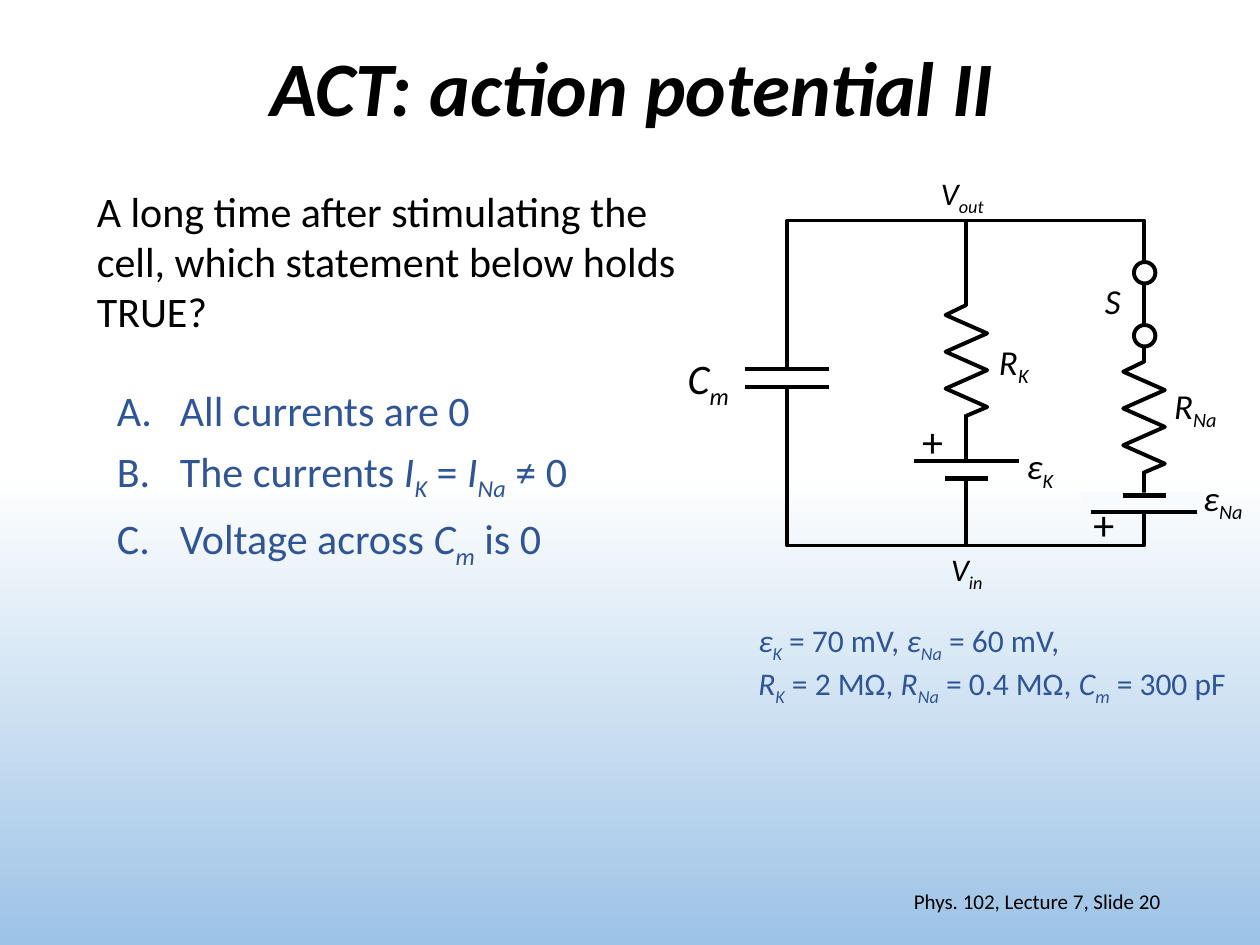
import pptx
import pptx.util
import pptx.dml.color
import pptx.enum.shapes
import pptx.enum.text
from lxml import etree
from pptx.util import Inches

COLORS = {"black": "000000", "white": "FFFFFF", "sky": "9DC3E6",
          "answer": "2F5597", "tint": "F8FBFD"}
FONT = "Calibri"
DRAWING = "{http://schemas.openxmlformats.org/drawingml/2006/main}"

TITLE = "ACT: action potential II"
QUESTION = ("A long time after stimulating the cell, "
            "which statement below holds TRUE?")
FOOTER = "Phys. 102, Lecture 7, Slide 20"
ANSWERS = [
    [("All currents are 0", "plain")],
    [("The currents ", "plain"), ("I", "italic"), ("K", "sub"), (" = ", "plain"),
     ("I", "italic"), ("Na", "sub"), (" ≠ 0", "plain")],
    [("Voltage across ", "plain"), ("C", "italic"), ("m", "sub"), (" is 0", "plain")],
]
VALUES = [
    [("ε", "italic"), ("K", "sub"), (" = 70 mV, ", "plain"),
     ("ε", "italic"), ("Na", "sub"), (" = 60 mV,", "plain")],
    [("R", "italic"), ("K", "sub"), (" = 2 MΩ, ", "plain"),
     ("R", "italic"), ("Na", "sub"), (" = 0.4 MΩ, ", "plain"),
     ("C", "italic"), ("m", "sub"), (" = 300 pF", "plain")],
]
SYMBOLS = [
    ("R", "Na", 20, (9.22, 3, 0.57, 0.44)),
    ("ε", "K", 20, (8.05, 3.48, 0.43, 0.44)),
    ("R", "K", 20, (7.83, 2.65, 0.45, 0.44)),
    ("ε", "Na", 20, (9.45, 3.73, 0.55, 0.44)),
    ("V", "out", 18, (7.37, 1.33, 0.63, 0.4)),
    ("C", "m", 24, (5.36, 2.75, 0.55, 0.5)),
    ("S", "", 20, (8.67, 2.17, 0.33, 0.44)),
    ("V", "in", 18, (7.45, 4.32, 0.47, 0.4)),
]
PLUS_SIGNS = [(7.22, 3.25, 0.37, 0.5), (8.58, 3.91, 0.37, 0.5)]

LEFT, MIDDLE, RIGHT = 6.25, 7.67, 9.08
TOP, BOTTOM = 1.75, 4.33

presentation = pptx.Presentation()
presentation.slide_width, presentation.slide_height = Inches(10), Inches(7.5)
slide = presentation.slides.add_slide(presentation.slide_layouts[6])
shapes = slide.shapes


def rgb(name):
    return pptx.dml.color.RGBColor.from_string(COLORS[name])


def add_text(box, paragraphs, size, color="black", bold=False, wrap=True,
             align=None, anchor=None, spacing=None, after=None, lettered=False):
    frame = shapes.add_textbox(*map(Inches, box)).text_frame
    frame.word_wrap = wrap
    if anchor:
        frame.vertical_anchor = anchor
    for index, runs in enumerate(paragraphs):
        paragraph = frame.paragraphs[0] if index == 0 else frame.add_paragraph()
        if lettered:
            properties = paragraph._p.get_or_add_pPr()
            properties.set("marL", str(Inches(0.5)))
            properties.set("indent", str(Inches(-0.5)))
            etree.SubElement(properties, DRAWING + "buFont", typeface="+mj-lt")
            etree.SubElement(properties, DRAWING + "buAutoNum", type="alphaUcPeriod")
        paragraph.alignment = align
        paragraph.line_spacing = spacing
        if after:
            paragraph.space_after = pptx.util.Pt(after)
        for text, style in runs:
            run = paragraph.add_run()
            run.text = text
            run.font.name = FONT
            run.font.size = pptx.util.Pt(size)
            run.font.bold = bold
            run.font.italic = style != "plain"
            run.font.color.rgb = rgb(color)
            if style == "sub":
                run._r.get_or_add_rPr().set("baseline", "-25000")


def add_block(kind, box, fill=None, outlined=False):
    shape = shapes.add_shape(kind, *map(Inches, box))
    shape.shadow.inherit = False
    if fill:
        shape.fill.solid()
        shape.fill.fore_color.rgb = rgb(fill)
    else:
        shape.fill.background()
    if outlined:
        shape.line.color.rgb = rgb("black")
        shape.line.width = pptx.util.Pt(2.25)
    else:
        shape.line.fill.background()


def add_gap(x, y, width, height, fill="white"):
    add_block(pptx.enum.shapes.MSO_SHAPE.RECTANGLE, (x, y, width, height), fill)


def add_wire(x1, y1, x2, y2, width=2.25):
    wire = shapes.add_connector(pptx.enum.shapes.MSO_CONNECTOR.STRAIGHT,
                                *map(Inches, (x1, y1, x2, y2)))
    wire.line.color.rgb = rgb("black")
    wire.line.width = pptx.util.Pt(width)
    etree.SubElement(wire._element.spPr, DRAWING + "effectLst")


def add_resistor(x, top):
    add_gap(x - 0.18, top + 0.01, 0.36, 0.86)
    bends = [(x + (0.165 if i % 2 else -0.165), top + 0.08 + 0.146 * i)
             for i in range(6)]
    points = [(Inches(px), Inches(py)) for px, py in bends + [(x, top + 0.88)]]
    builder = shapes.build_freeform(Inches(x), Inches(top))
    builder.add_line_segments(points, close=False)
    zigzag = builder.convert_to_shape()
    zigzag.shadow.inherit = False
    zigzag.fill.background()
    zigzag.line.color.rgb = rgb("black")
    zigzag.line.width = pptx.util.Pt(2.25)


def add_battery(x, gap_top, long_y, short_y, fill):
    add_gap(x - 0.5, gap_top, 1, 0.16, fill)
    add_wire(x - 0.42, long_y, x + 0.42, long_y)
    add_wire(x - 0.17, short_y, x + 0.17, short_y, 3)


background = slide.background.fill
background.gradient()
background.gradient_angle = 270
for stop, position, color in zip(background.gradient_stops, (0.5, 1), ("white", "sky")):
    stop.position = position
    stop.color.rgb = rgb(color)

anchor_middle = pptx.enum.text.MSO_ANCHOR.MIDDLE
add_text((0.83, 3, 4, 1.48), ANSWERS, 24, "answer", after=6, lettered=True)
add_text((0.71, 0, 8.62, 1.45), [[(TITLE, "italic")]], 44, bold=True, spacing=0.9,
         align=pptx.enum.text.PP_ALIGN.CENTER, anchor=anchor_middle)
add_text((7.06, 6.95, 2.25, 0.4), [[(FOOTER, "plain")]], 12,
         align=pptx.enum.text.PP_ALIGN.RIGHT, anchor=anchor_middle)
add_text((0.67, 1.42, 4.92, 1.31), [[(QUESTION, "plain")]], 24)

add_block(pptx.enum.shapes.MSO_SHAPE.RECTANGLE,
          (LEFT, TOP, RIGHT - LEFT, BOTTOM - TOP), outlined=True)
add_wire(MIDDLE, TOP, MIDDLE, BOTTOM)
add_resistor(RIGHT, 2.87)
add_battery(MIDDLE, 3.65, 3.66, 3.8, "white")
add_resistor(MIDDLE, 2.42)
add_battery(RIGHT, 3.91, 4.06, 3.93, "tint")

add_gap(LEFT - 0.34, 2.92, 0.67, 0.16)
for plate_y in (2.93, 3.07):
    add_wire(LEFT - 0.34, plate_y, LEFT + 0.33, plate_y)

add_gap(8.93, 2.08, 0.58, 0.67)
add_wire(RIGHT, 2.17, RIGHT, 2.67)
for contact_y in (2.08, 2.58):
    add_block(pptx.enum.shapes.MSO_SHAPE.OVAL,
              (RIGHT - 0.08, contact_y, 0.17, 0.17), "white", outlined=True)

for symbol, subscript, size, box in SYMBOLS:
    runs = [(symbol, "italic")] + ([(subscript, "sub")] if subscript else [])
    add_text(box, [runs], size, wrap=False)
for box in PLUS_SIGNS:
    add_text(box, [[("+", "plain")]], 24, wrap=False)
add_text((5.92, 4.88, 4, 0.71), VALUES, 18, "answer")

presentation.save("out.pptx")
